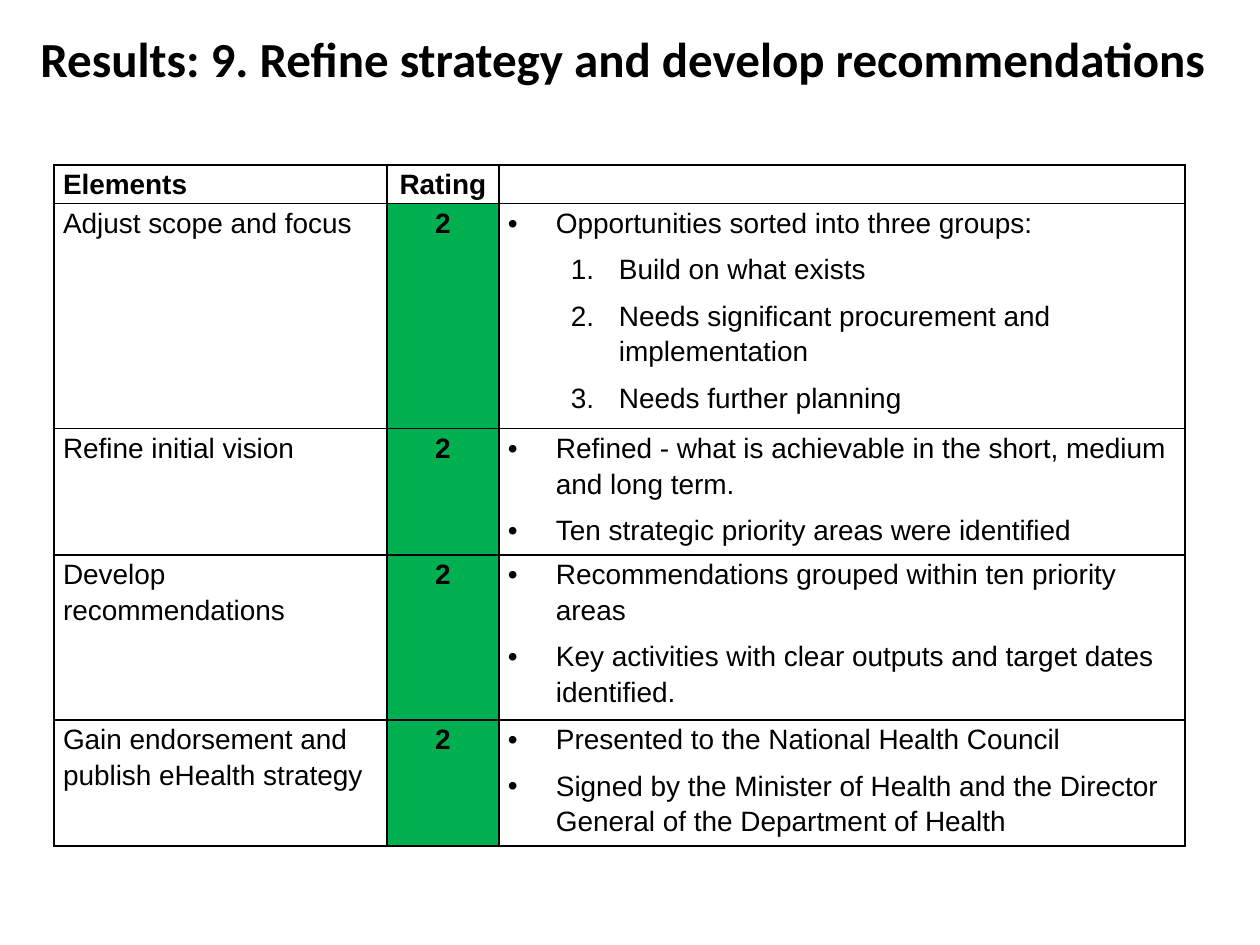
from lxml import etree
from pptx import Presentation
from pptx.dml.color import RGBColor
from pptx.enum.text import MSO_ANCHOR, PP_ALIGN
from pptx.oxml.ns import qn
from pptx.util import Pt

PX = 914400 // 126  # EMU per pixel
BLACK = RGBColor(0x00, 0x00, 0x00)
GREEN = RGBColor(0x00, 0xB0, 0x50)
LEFT, CENTER = PP_ALIGN.LEFT, PP_ALIGN.CENTER
MIDDLE = MSO_ANCHOR.MIDDLE

BULLET, NUMBER = "bullet", "number"
INDENTS = {BULLET: 48, NUMBER: 111}
HANGING = 48

COLUMN_WIDTHS = [333, 112, 686]
ROW_HEIGHTS = [35, 225, 118, 153, 118]
ELEMENTS = [
    ("Adjust scope and focus", "2", [
        (BULLET, "Opportunities sorted into three groups:"),
        (NUMBER, "Build on what exists"),
        (NUMBER, "Needs significant procurement and implementation"),
        (NUMBER, "Needs further planning")]),
    ("Refine initial vision", "2", [
        (BULLET, "Refined - what is achievable in the short, medium and long term."),
        (BULLET, "Ten strategic priority areas were identified")]),
    ("Develop recommendations", "2", [
        (BULLET, "Recommendations grouped within ten priority areas"),
        (BULLET, "Key activities with clear outputs and target dates identified.")]),
    ("Gain endorsement and publish eHealth strategy", "2", [
        (BULLET, "Presented to the National Health Council"),
        (BULLET, "Signed by the Minister of Health and the Director General "
                 "of the Department of Health")]),
]


def add_text(paragraph, text, size, font, bold, align):
    paragraph.alignment = align
    run = paragraph.add_run()
    run.text = text
    run.font.size = Pt(size)
    run.font.name = font
    run.font.bold = bold
    run.font.color.rgb = BLACK


def fill_cell(cell, lines, bold=False, align=LEFT, fill=None):
    cell.margin_left = cell.margin_right = 9 * PX
    cell.margin_top = cell.margin_bottom = 0

    # Black border on every side
    properties = cell._tc.get_or_add_tcPr()
    for side in ("a:lnL", "a:lnR", "a:lnT", "a:lnB"):
        line = etree.SubElement(properties, qn(side), w=str(Pt(1)))
        solid = etree.SubElement(line, qn("a:solidFill"))
        etree.SubElement(solid, qn("a:srgbClr"), val=str(BLACK))
    if fill is None:
        cell.fill.background()
    else:
        cell.fill.solid()
        cell.fill.fore_color.rgb = fill

    # Paragraphs, with bullets or numbers where asked for
    frame = cell.text_frame
    for index, (kind, text) in enumerate(lines):
        paragraph = frame.add_paragraph() if index else frame.paragraphs[0]
        paragraph.line_spacing = 1.15
        paragraph.space_before = paragraph.space_after = Pt(3)
        add_text(paragraph, text, 16, "Arial", bold, align)
        if kind is None:
            continue
        settings = paragraph._p.get_or_add_pPr()
        settings.set("marL", str(INDENTS[kind] * PX))
        settings.set("indent", str(-HANGING * PX))
        if kind == BULLET:
            etree.SubElement(settings, qn("a:buFont"), typeface="Arial")
            etree.SubElement(settings, qn("a:buChar"), char="•")
        else:
            paragraph.level = 1
            etree.SubElement(settings, qn("a:buFont"), typeface="+mj-lt")
            etree.SubElement(settings, qn("a:buAutoNum"), type="arabicPeriod")


presentation = Presentation()
presentation.slide_width = 1260 * PX
presentation.slide_height = 945 * PX
slide = presentation.slides.add_slide(presentation.slide_layouts[6])

# Title
title = slide.shapes.add_textbox(0, 1 * PX, 1245 * PX, 113 * PX)
title.text_frame.word_wrap = True
title.text_frame.vertical_anchor = MIDDLE
add_text(title.text_frame.paragraphs[0],
         "Results: 9. Refine strategy and develop recommendations",
         28, "Calibri", True, CENTER)

# Table grid
table = slide.shapes.add_table(
    len(ROW_HEIGHTS), len(COLUMN_WIDTHS), 54 * PX, 165 * PX,
    sum(COLUMN_WIDTHS) * PX, sum(ROW_HEIGHTS) * PX).table
table.first_row = table.horz_banding = False
for column, width in zip(table.columns, COLUMN_WIDTHS):
    column.width = width * PX
for row, height in zip(table.rows, ROW_HEIGHTS):
    row.height = height * PX

# Header row
fill_cell(table.cell(0, 0), [(None, "Elements")], bold=True)
fill_cell(table.cell(0, 1), [(None, "Rating")], bold=True, align=CENTER)
fill_cell(table.cell(0, 2), [])
empty_paragraph = table.cell(0, 2).text_frame.paragraphs[0]
etree.SubElement(empty_paragraph._p, qn("a:endParaRPr"), sz="1600")

# Element rows
for row_index, (element, rating, findings) in enumerate(ELEMENTS, start=1):
    fill_cell(table.cell(row_index, 0), [(None, element)])
    fill_cell(table.cell(row_index, 1), [(None, rating)],
              bold=True, align=CENTER, fill=GREEN)
    fill_cell(table.cell(row_index, 2), findings)

presentation.save("out.pptx")
